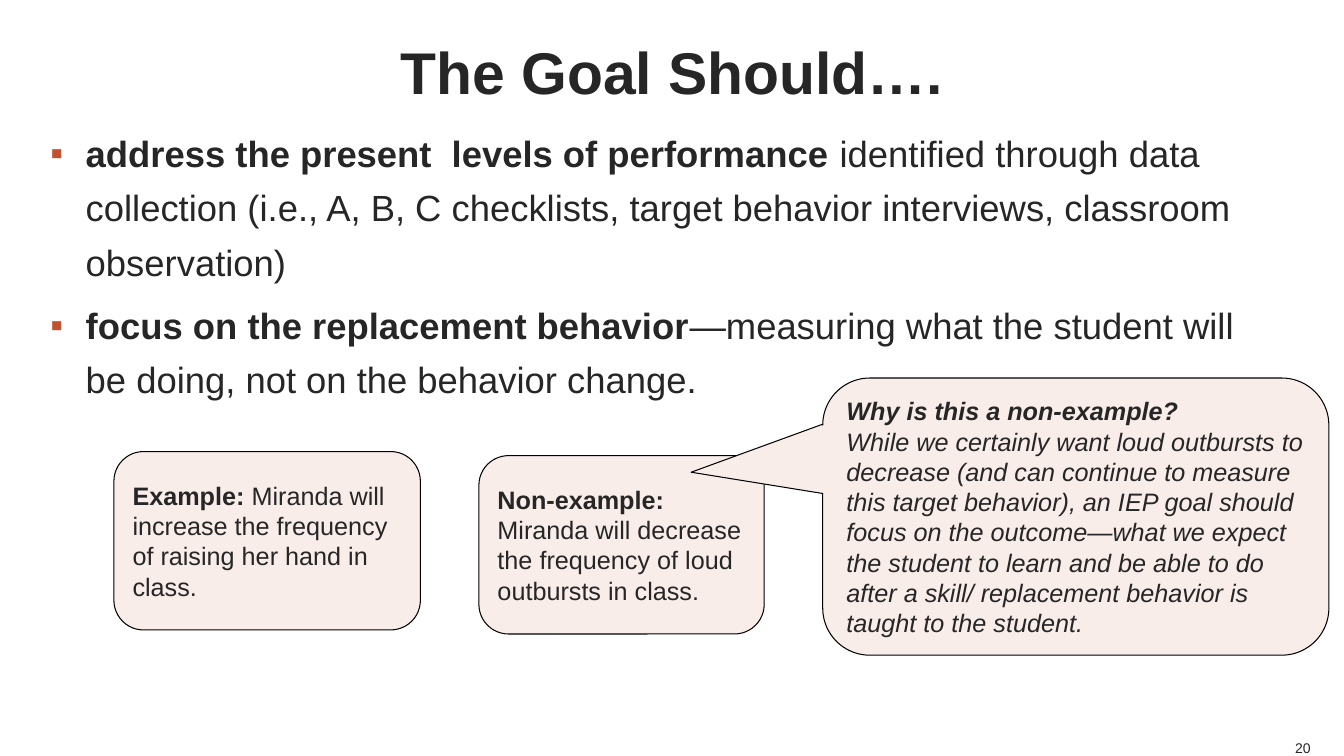
from dataclasses import dataclass

from lxml import etree
from pptx import Presentation
from pptx.dml.color import RGBColor
from pptx.enum.shapes import MSO_SHAPE
from pptx.enum.text import MSO_ANCHOR, PP_ALIGN
from pptx.oxml.ns import qn
from pptx.util import Pt

PX = 9144
ROUND = MSO_SHAPE.ROUNDED_RECTANGLE
CALLOUT = MSO_SHAPE.ROUNDED_RECTANGULAR_CALLOUT
TOP, MIDDLE, BOTTOM = MSO_ANCHOR.TOP, MSO_ANCHOR.MIDDLE, MSO_ANCHOR.BOTTOM
LEFT, CENTER, RIGHT = PP_ALIGN.LEFT, PP_ALIGN.CENTER, PP_ALIGN.RIGHT


@dataclass(frozen=True)
class Theme:
    font: str = "Arial"
    ink: str = "262626"
    accent: str = "C25131"
    panel: str = "F9EDEA"
    outline: str = "000000"
    title: int = 42
    body: int = 26
    note: int = 18
    number: int = 10


class Deck:
    """Draws styled elements on the current slide, with lengths in px."""

    def __init__(self, theme, width, height):
        self.theme = theme
        self.prs = Presentation()
        self.prs.slide_width, self.prs.slide_height = width * PX, height * PX
        self.s = self.prs.slides.add_slide(self.prs.slide_layouts[6])

    def fill_text(self, tf, paragraphs, size, align=LEFT, italic=False):
        for i, runs in enumerate(paragraphs):
            p = tf.paragraphs[0] if i == 0 else tf.add_paragraph()
            p.alignment = align
            for text, bold in runs:
                r = p.add_run()
                r.text = text
                r.font.name = self.theme.font
                r.font.size = Pt(size)
                r.font.bold = bold
                r.font.italic = italic
                r.font.color.rgb = RGBColor.from_string(self.theme.ink)

    def text(self, box, paragraphs, size, align=LEFT, anchor=TOP, wrap=True):
        tf = self.s.shapes.add_textbox(*(v * PX for v in box)).text_frame
        tf.margin_left = tf.margin_right = tf.margin_top = tf.margin_bottom = 0
        tf.word_wrap = wrap
        tf.vertical_anchor = anchor
        self.fill_text(tf, paragraphs, size, align)
        return tf

    def bullets(self, box, paragraphs, indent=35):
        tf = self.text(box, paragraphs, self.theme.body)
        for i, p in enumerate(tf.paragraphs):
            p.line_spacing = 1.25
            p.space_before = Pt(6 if i else 0)
            pPr = p._p.get_or_add_pPr()
            pPr.set("marL", str(indent * PX))
            pPr.set("indent", str(-indent * PX))
            color = etree.SubElement(pPr, qn("a:buClr"))
            etree.SubElement(color, qn("a:srgbClr"), val=self.theme.accent)
            etree.SubElement(pPr, qn("a:buFont"), typeface=self.theme.font)
            etree.SubElement(pPr, qn("a:buChar"), char="▪")

    def panel(self, kind, box, paragraphs, adjustments=(), italic=False):
        sp = self.s.shapes.add_shape(kind, *(v * PX for v in box))
        sp.shadow.inherit = False
        for i, value in enumerate(adjustments):
            sp.adjustments[i] = value
        sp.fill.solid()
        sp.fill.fore_color.rgb = RGBColor.from_string(self.theme.panel)
        sp.line.color.rgb = RGBColor.from_string(self.theme.outline)
        sp.line.width = Pt(0.75)
        tf = sp.text_frame
        tf.word_wrap = True
        tf.vertical_anchor = MIDDLE
        self.fill_text(tf, paragraphs, self.theme.note, italic=italic)


def main():
    theme = Theme()
    deck = Deck(theme, 1333, 750)
    deck.text((50, 0, 1233, 140), [[("The Goal Should….", True)]],
              theme.title, CENTER, MIDDLE)
    deck.bullets((50, 119, 1198, 475), [
        [("address the present  levels of performance ", True),
         ("identified through data collection (i.e., A, B, C checklists, "
          "target behavior interviews, classroom observation)", False)],
        [("focus on the replacement behavior", True),
         ("—measuring what the student will be doing, "
          "not on the behavior change.", False)],
    ])
    deck.panel(ROUND, (113, 448, 304, 177), [
        [("Example: ", True),
         ("Miranda will increase the frequency of raising her hand in class.",
          False)]])
    deck.panel(ROUND, (475, 452, 283, 177), [
        [("Non-example: ", True),
         ("Miranda will decrease the frequency of loud outbursts in class.",
          False)]])
    deck.panel(CALLOUT, (816, 375, 502, 275), [
        [("Why is this a non-example?", True)],
        [("While we certainly want loud outbursts to decrease (and can "
          "continue to measure this target behavior), an IEP goal should "
          "focus on the outcome—what we expect the student to learn and be "
          "able to do after a skill/ replacement behavior is taught to the "
          "student.", False)],
    ], (-0.76, -0.16, 0.17), italic=True)
    deck.text((1283, 733, 17, 17), [[("20", False)]],
              theme.number, RIGHT, BOTTOM, wrap=False)
    deck.prs.save("out.pptx")


if __name__ == "__main__":
    main()
